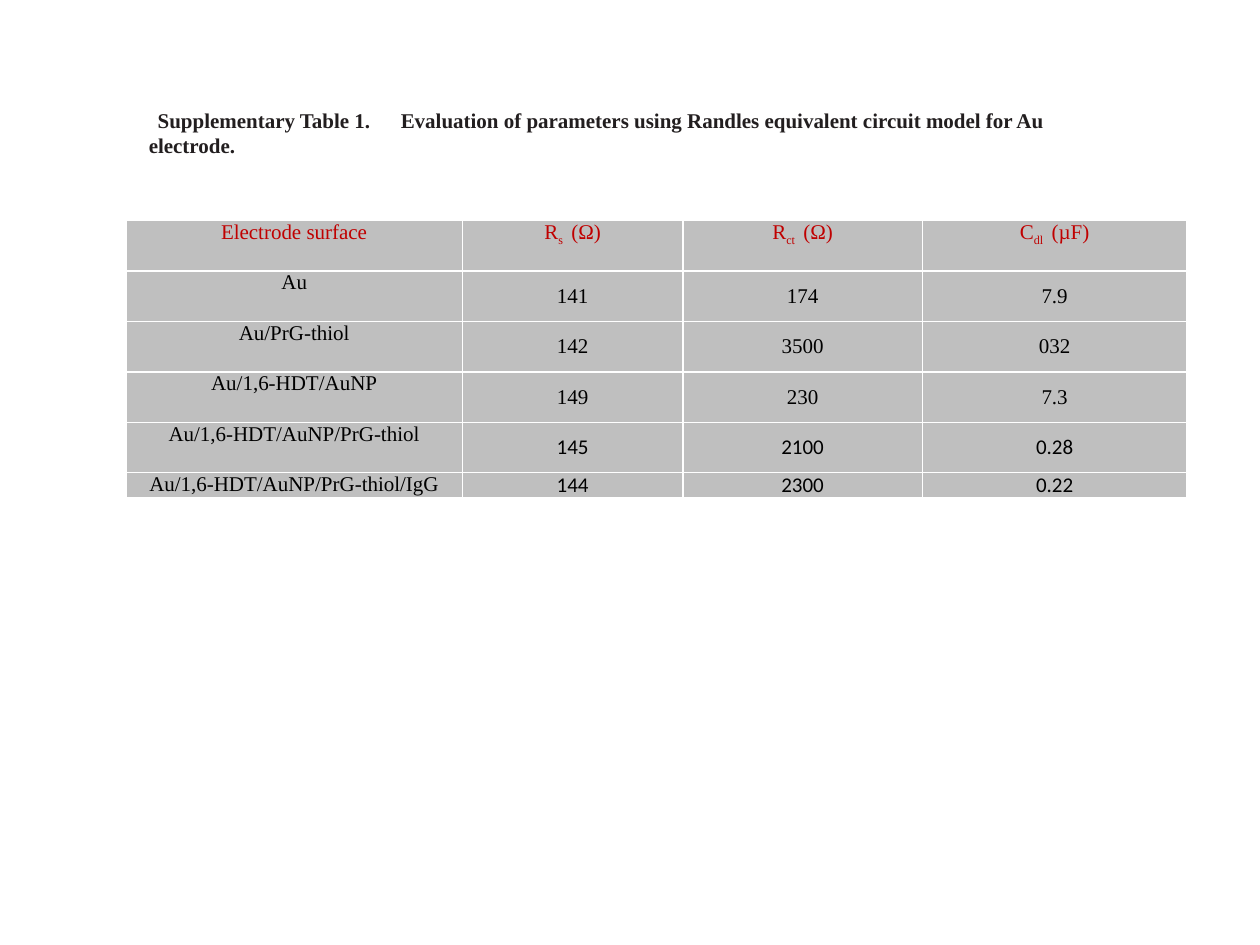
import pptx
import pptx.dml.color
import pptx.enum.text
import pptx.oxml
import pptx.oxml.ns
import pptx.util

Cm = pptx.util.Cm
Pt = pptx.util.Pt
RGBColor = pptx.dml.color.RGBColor
Anchor = pptx.enum.text.MSO_ANCHOR
Align = pptx.enum.text.PP_ALIGN

INK = RGBColor(0x22, 0x1E, 0x1F)
BLACK = RGBColor(0x00, 0x00, 0x00)
RED = RGBColor(0xC0, 0x00, 0x00)
GREY = RGBColor(0xBF, 0xBF, 0xBF)
WHITE = RGBColor(0xFF, 0xFF, 0xFF)
SERIF = "Times New Roman"
SANS = "Calibri"

CAPTION = ("Supplementary Table 1.\tEvaluation of parameters using Randles "
           "equivalent circuit model for Au electrode.")
HEADERS = [("Electrode surface",), ("R", "s ", " (Ω)"),
           ("R", "ct ", " (Ω)"), ("C", "dl ", " (µF)")]
MEASUREMENTS = [
    ("Au", "141", "174", "7.9"),
    ("Au/PrG-thiol", "142", "3500", "032"),
    ("Au/1,6-HDT/AuNP", "149", "230", "7.3"),
    ("Au/1,6-HDT/AuNP/PrG-thiol", "145", "2100", "0.28"),
    ("Au/1,6-HDT/AuNP/PrG-thiol/IgG", "144", "2300", "0.22"),
]
COLUMN_SHARES = [2.67, 1.75, 1.9, 2.1]
ROW_SHARES = [2, 2, 2, 2, 2, 1]


def format_span(span, face, color, bold=False):
    """Set the font of one run at the common size."""
    span.font.name = face
    span.font.size = Pt(12)
    span.font.bold = bold
    span.font.color.rgb = color


def add_caption(page, left, top, width, height):
    """Place the table caption in the given box."""
    box = page.shapes.add_textbox(left, top, width, height)
    frame = box.text_frame
    frame.word_wrap = True
    frame.vertical_anchor = Anchor.MIDDLE
    para = frame.paragraphs[0]
    para.text = CAPTION
    para._p.get_or_add_pPr().set("indent", str(Cm(0.18)))
    format_span(para.runs[0], SERIF, INK, bold=True)


def add_borders(cell):
    """Draw a thin white line on all four sides of a cell."""
    properties = cell._tc.get_or_add_tcPr()
    for side in ("lnL", "lnR", "lnT", "lnB"):
        properties.append(pptx.oxml.parse_xml(
            f'<a:{side} {pptx.oxml.ns.nsdecls("a")} w="{Pt(1)}">'
            f'<a:solidFill><a:srgbClr val="{WHITE}"/></a:solidFill></a:{side}>'))


def fill_cell(cell, parts, face, color, anchor):
    """Style a cell and write its parts, the second one as a subscript."""
    add_borders(cell)
    cell.fill.solid()
    cell.fill.fore_color.rgb = GREY
    cell.margin_left = cell.margin_right = Cm(0.18)
    cell.margin_top = cell.margin_bottom = 0
    cell.vertical_anchor = anchor
    para = cell.text_frame.paragraphs[0]
    para.alignment = Align.CENTER
    for index, part in enumerate(parts):
        span = para.add_run()
        span.text = part
        format_span(span, face, color)
        if index == 1:
            span.font._element.set("baseline", "-25000")


def add_parameter_table(page, left, top, width, height):
    """Place the table of circuit parameters in the given box."""
    rows = [HEADERS] + [[(text,) for text in row] for row in MEASUREMENTS]
    table = page.shapes.add_table(len(rows), len(HEADERS),
                                  left, top, width, height).table
    table.first_row = table.horz_banding = False
    for column, share in zip(table.columns, COLUMN_SHARES):
        column.width = int(width * share / sum(COLUMN_SHARES))
    for row, share in zip(table.rows, ROW_SHARES):
        row.height = int(height * share / sum(ROW_SHARES))
    for i, row in enumerate(rows):
        for j, parts in enumerate(row):
            face = SANS if i >= 4 and j > 0 else SERIF
            anchor = Anchor.TOP if i == 0 or j == 0 else Anchor.MIDDLE
            fill_cell(table.cell(i, j), parts, face, BLACK if i else RED, anchor)


def main():
    """Build the slide and save it."""
    deck = pptx.Presentation()
    deck.slide_width = Cm(25.4)
    deck.slide_height = Cm(19.05)
    page = deck.slides.add_slide(deck.slide_layouts[6])
    add_caption(page, Cm(2.75), Cm(2.04), Cm(20.11), Cm(1.28))
    add_parameter_table(page, Cm(2.54), Cm(4.45), Cm(21.39), Cm(5.59))
    deck.save("out.pptx")


if __name__ == "__main__":
    main()
